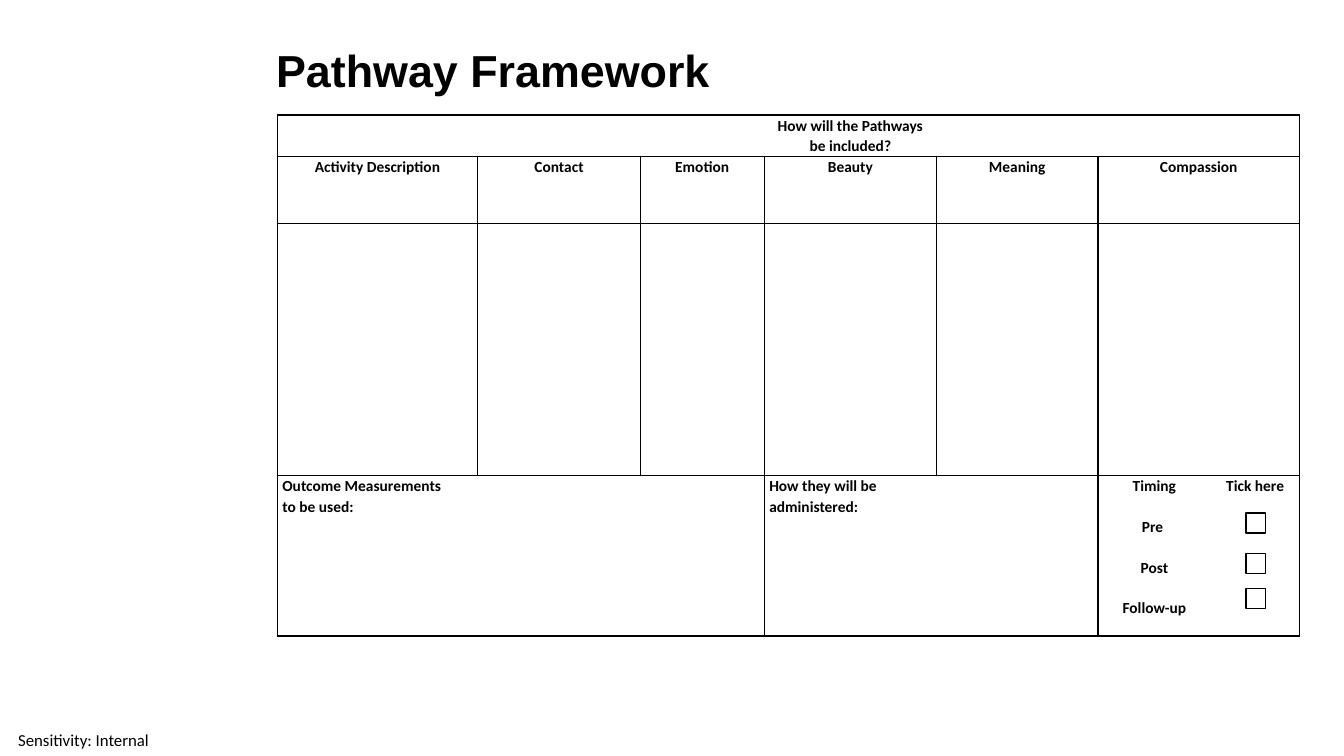
import pptx
import pptx.util
import pptx.dml.color
import pptx.enum.shapes
import pptx.enum.text
import pptx.oxml.ns
import lxml.etree

PX = 9144  # 100 px to the inch
ALIGN = pptx.enum.text.PP_ALIGN
MIDDLE = pptx.enum.text.MSO_ANCHOR.MIDDLE
THEME = {
    "ink": pptx.dml.color.RGBColor(0, 0, 0),
    "title": ("Arial", 32, True),
    "table": ("Calibri", 11, True),
    "label": ("Calibri", 12, False),
    "line": pptx.util.Pt(1),
}


def write(frame, text, style, align, spacing=1.0, gap=0):
    """Fill a text frame, one paragraph a line, with a gap between them."""
    frame.word_wrap = True
    frame.text = text
    for index, para in enumerate(frame.paragraphs):
        para.alignment = align
        para.line_spacing = spacing
        if index:
            para.space_before = pptx.util.Pt(gap)
        for span in para.runs:
            span.font.name, size, span.font.bold = THEME[style]
            span.font.size = pptx.util.Pt(size)
            span.font.color.rgb = THEME["ink"]


def draw_borders(cell, drawn):
    """Give a cell the sides named in drawn and clear the others."""
    properties = cell._tc.get_or_add_tcPr()
    for position, side in enumerate("LRTB"):
        line = lxml.etree.Element(pptx.oxml.ns.qn("a:ln" + side), w=str(THEME["line"]))
        if side in drawn:
            fill = lxml.etree.SubElement(line, pptx.oxml.ns.qn("a:solidFill"))
            lxml.etree.SubElement(fill, pptx.oxml.ns.qn("a:srgbClr"), val=str(THEME["ink"]))
        else:
            lxml.etree.SubElement(line, pptx.oxml.ns.qn("a:noFill"))
        properties.insert(position, line)


deck = pptx.Presentation()
deck.slide_width, deck.slide_height = 1333 * PX, 750 * PX
page = deck.slides.add_slide(deck.slide_layouts[6])

# Sensitivity label
label = page.shapes.add_textbox(0, 718 * PX, 166 * PX, 32 * PX).text_frame
label.margin_left = label.margin_right = label.margin_top = label.margin_bottom = 0
label.vertical_anchor = MIDDLE
write(label, "Sensitivity: Internal", "label", ALIGN.CENTER)

# Title
title = page.shapes.add_textbox(264 * PX, 40 * PX, 978 * PX, 65 * PX).text_frame
title.vertical_anchor = MIDDLE
write(title, "Pathway Framework", "title", ALIGN.LEFT, 0.9)

# Framework table
column_widths = [178, 21, 21, 140, 123, 171, 160, 112, 88]
row_heights = [41, 67, 250, 159]
table = page.shapes.add_table(
    len(row_heights), len(column_widths), 275 * PX, 114 * PX,
    sum(column_widths) * PX, sum(row_heights) * PX).table
table.first_row = table.horz_banding = False
for column, width in zip(table.columns, column_widths):
    column.width = width * PX
for row, height in zip(table.rows, row_heights):
    row.height = height * PX

# Each row: starting columns of its cells, and the vertical rules that show
pathway_starts = [0, 2, 4, 5, 6, 7]
layout = [
    ([0, 2, 4, 5, 6, 7], {0, 9}),
    (pathway_starts, {*pathway_starts, 9}),
    (pathway_starts, {*pathway_starts, 9}),
    ([0, 1, 3, 5, 6, 7, 8], {0, 5, 7, 9}),
]
for row_index, (starts, rules) in enumerate(layout):
    for start, end in zip(starts, starts[1:] + [len(column_widths)]):
        cell = table.cell(row_index, start)
        if end - start > 1:
            cell.merge(table.cell(row_index, end - 1))
        cell.margin_left = cell.margin_right = 5 * PX
        cell.margin_top = cell.margin_bottom = 0
        for column_index in range(start, end):
            part = table.cell(row_index, column_index)
            part.fill.background()
            draw_borders(part, "TB" + "L" * (start in rules) + "R" * (end in rules))

# Table wording
headings = ["Activity Description", "Contact", "Emotion", "Beauty", "Meaning", "Compassion"]
entries = [(1, start, heading, ALIGN.CENTER) for start, heading in zip(pathway_starts, headings)]
entries += [
    (0, 5, "How will the Pathways be included?", ALIGN.CENTER),
    (3, 0, "Outcome Measurements to be used:", ALIGN.LEFT),
    (3, 5, "How they will be administered:", ALIGN.LEFT),
    (3, 7, "Timing\nPre \nPost\nFollow-up", ALIGN.CENTER),
    (3, 8, "Tick here", ALIGN.CENTER),
]
for row_index, column_index, text, align in entries:
    write(table.cell(row_index, column_index).text_frame, text, "table", align, 1.07, gap=14.5)

# Tick boxes for pre, post and follow-up
for top in (509, 549, 584):
    tick_box = page.shapes.add_shape(
        pptx.enum.shapes.MSO_SHAPE.RECTANGLE, 1236 * PX, top * PX, 19 * PX, 20 * PX)
    tick_box.shadow.inherit = False
    tick_box.fill.background()
    tick_box.line.color.rgb = THEME["ink"]
    tick_box.line.width = THEME["line"]

deck.save("out.pptx")
